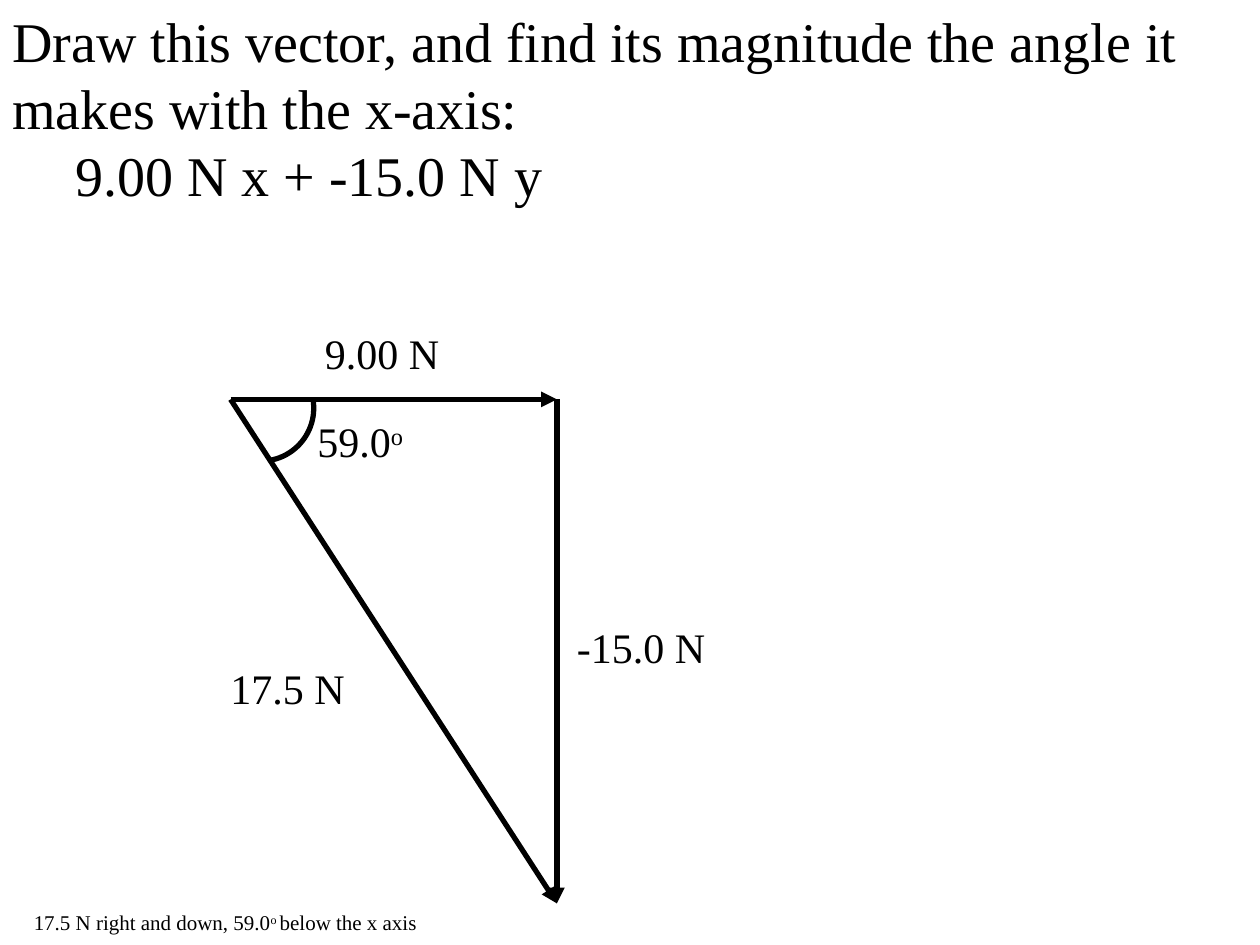
"""Build a slide that resolves a vector into components, magnitude and angle."""
from lxml import etree
from pptx import Presentation
from pptx import util as u
from pptx.dml.color import RGBColor
from pptx.enum import shapes, text
from pptx.oxml import ns

BLACK = RGBColor(0, 0, 0)
FONT = "Times New Roman"
LINE_WIDTH = u.Pt(3)

QUESTION = [
    [("Draw this vector, and find its magnitude the angle it makes with the x-axis:", False)],
    [("\t9.00 N x + -15.0 N y", False)],
]
ANSWER = [[("17.5 N right and down, 59.0", False), ("o ", True), ("below the x axis", False)]]

TEXTS = [
    (ANSWER, (0.17, 7.17, 3.3, 0.3), 12, False),
    (QUESTION, (0, 0, 10, 1.72), 32, True),
    ([[("9.00 N", False)]], (2.48, 2.55, 1.11, 0.5), 24, False),
    ([[("-15.0 N", False)]], (4.48, 4.88, 1.22, 0.5), 24, False),
    ([[("17.5 N", False)]], (1.73, 5.21, 1.11, 0.5), 24, False),
    ([[("59.0", False), ("o", True)]], (2.42, 3.25, 0.9, 0.5), 24, False),
]

TAIL, CORNER, TIP = (1.83, 3.17), (4.42, 3.17), (4.42, 7.17)
VECTORS = [(TAIL, TIP), (TAIL, CORNER), (CORNER, TIP)]
ARC_CENTER, ARC_RADIUS, ARC_ROTATION = (2.07, 3.24), 0.42, 80.4


def add_text(page, paragraphs, frame, size, wrap):
    box = page.shapes.add_textbox(*map(u.Inches, frame)).text_frame
    box.word_wrap = wrap
    box.auto_size = text.MSO_AUTO_SIZE.SHAPE_TO_FIT_TEXT
    for index, spans in enumerate(paragraphs):
        para = box.add_paragraph() if index else box.paragraphs[0]
        para.font.name = FONT
        para.font.size = u.Pt(size)
        para.font.color.rgb = BLACK
        for words, raised in spans:
            span = para.add_run()
            span.text = words
            if raised:
                span.font._element.set("baseline", "30000")


def style_line(line):
    line.color.rgb = BLACK
    line.width = LINE_WIDTH


def add_vector(page, start, end):
    arrow = page.shapes.add_connector(
        shapes.MSO_CONNECTOR.STRAIGHT, *map(u.Inches, start + end))
    style_line(arrow.line)
    etree.SubElement(arrow.line._get_or_add_ln(), ns.qn("a:tailEnd"), type="triangle")
    etree.SubElement(arrow._element.spPr, ns.qn("a:effectLst"))


def add_angle(page):
    left, top = (center - ARC_RADIUS for center in ARC_CENTER)
    side = 2 * ARC_RADIUS
    arc = page.shapes.add_shape(
        shapes.MSO_SHAPE.ARC, *map(u.Inches, (left, top, side, side)))
    arc.rotation = ARC_ROTATION
    arc.shadow.inherit = False
    arc.fill.background()
    style_line(arc.line)


def main():
    deck = Presentation()
    deck.slide_width, deck.slide_height = u.Inches(10), u.Inches(7.5)
    page = deck.slides.add_slide(deck.slide_layouts[6])
    for entry in TEXTS:
        add_text(page, *entry)
    for start, end in VECTORS:
        add_vector(page, start, end)
    add_angle(page)
    deck.save("out.pptx")


if __name__ == "__main__":
    main()
